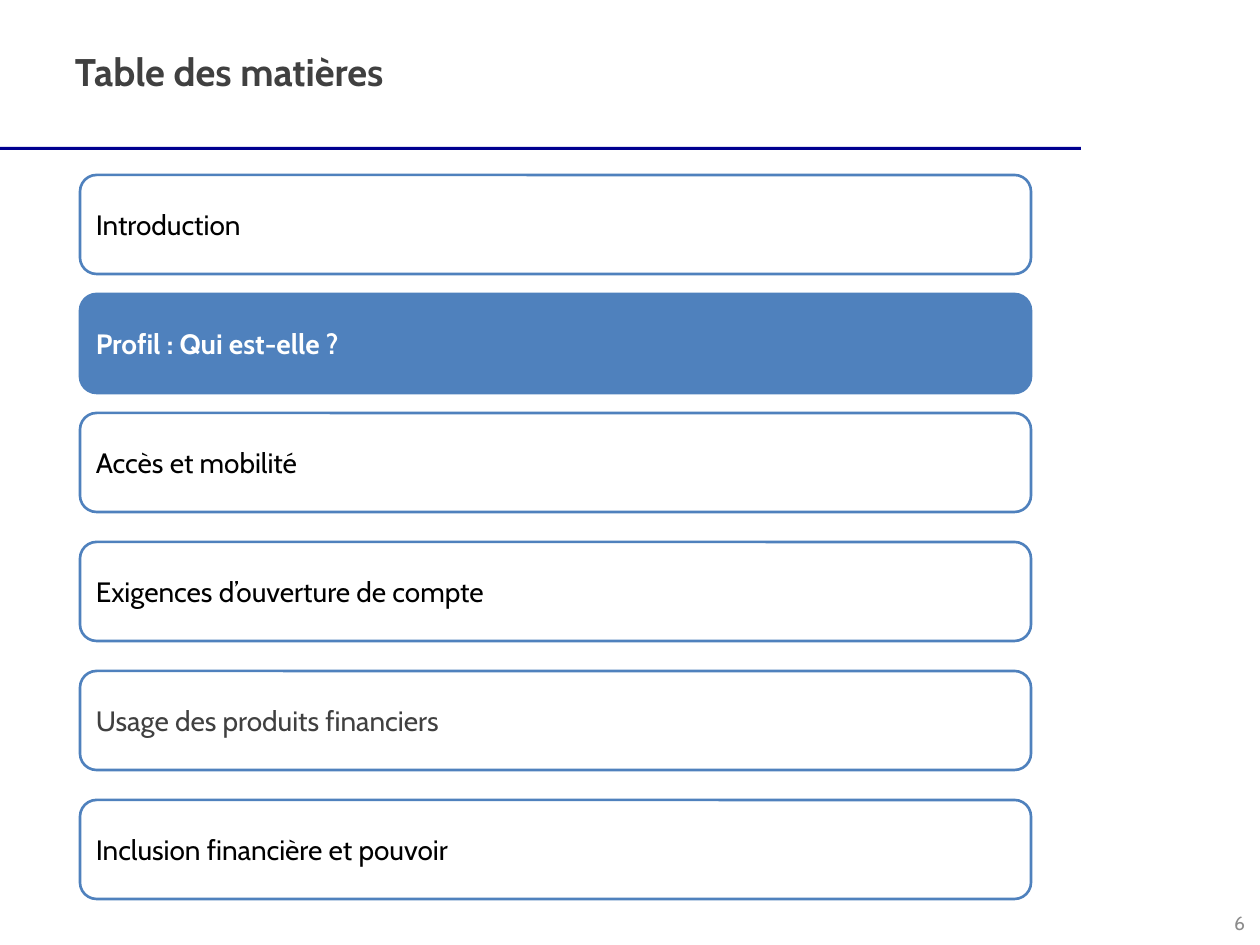
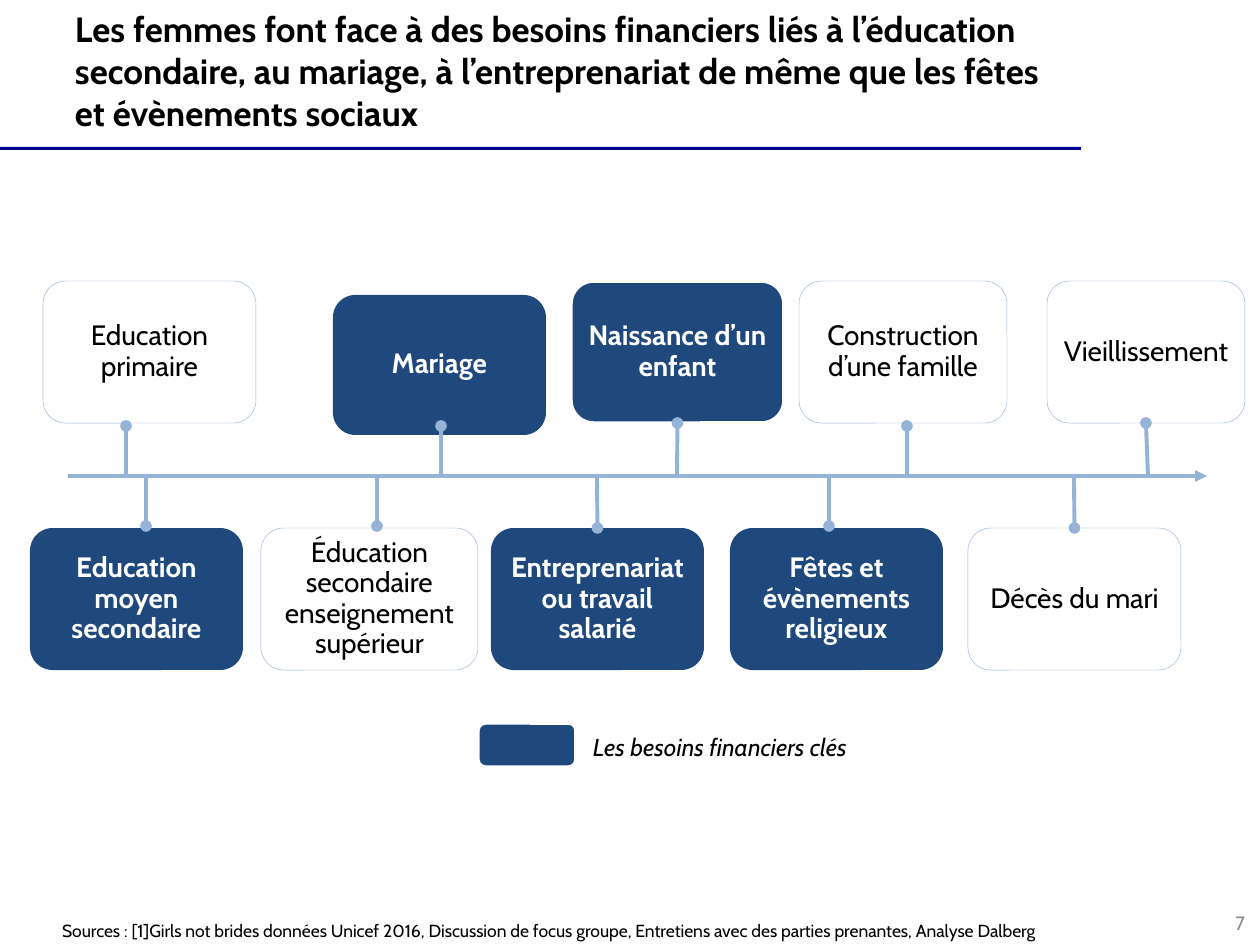
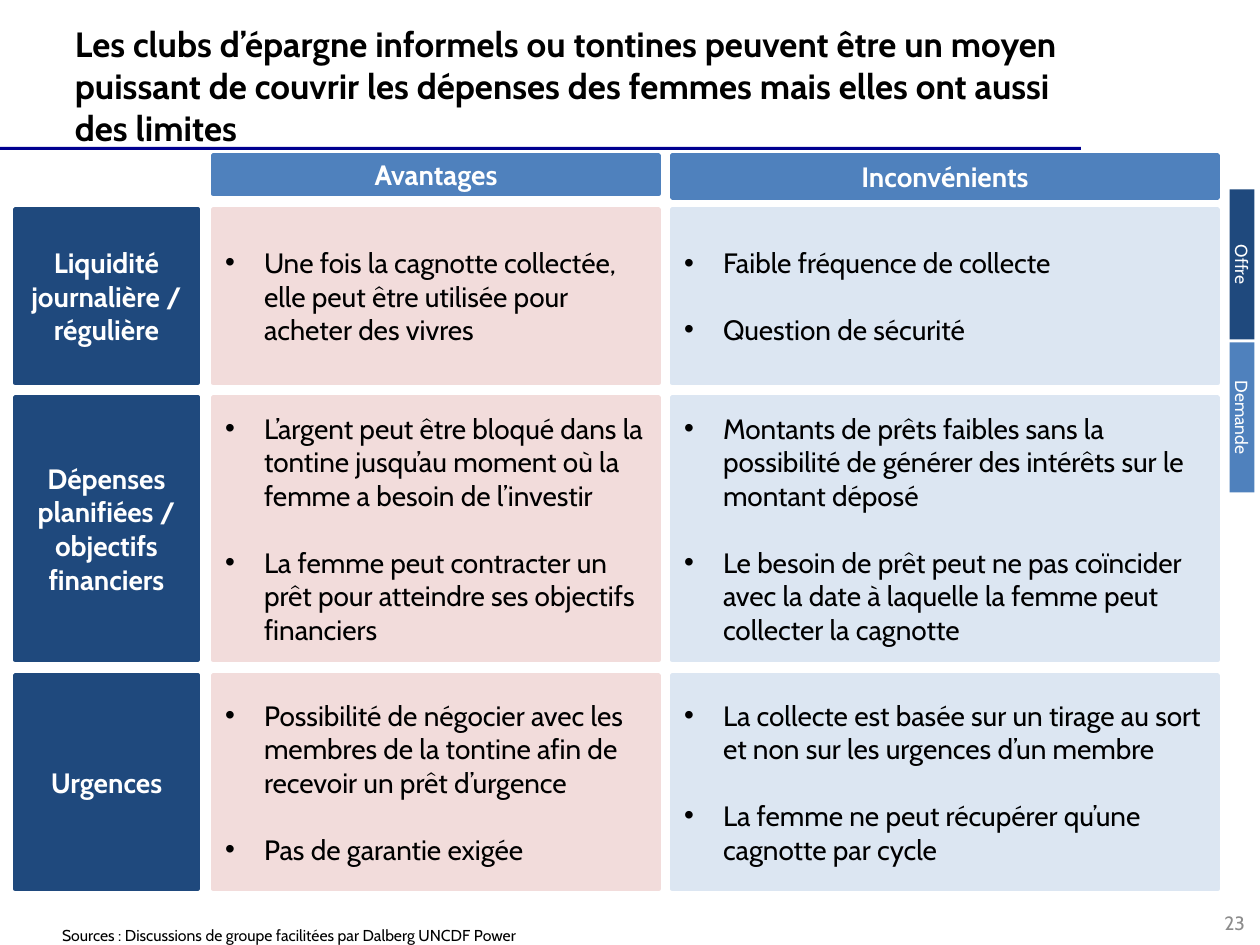
from lxml import etree
from pptx import Presentation
from pptx import util as u
from pptx.dml import color
from pptx.enum import shapes, text
from pptx.oxml import ns

FONT = "Cabin"
BLACK, WHITE, CHARCOAL, GRAY = "000000", "FFFFFF", "404040", "8C8C8C"
NAVY, BLUE, PALE_BLUE, RULE_BLUE = "1F497D", "4F81BD", "95B3D7", "000090"
PINK, ICE = "F2DCDB", "DCE6F2"
LEFT, CENTER, RIGHT = text.PP_ALIGN.LEFT, text.PP_ALIGN.CENTER, text.PP_ALIGN.RIGHT
TOP, MIDDLE, BOTTOM = text.MSO_ANCHOR.TOP, text.MSO_ANCHOR.MIDDLE, text.MSO_ANCHOR.BOTTOM
RECTANGLE = shapes.MSO_SHAPE.RECTANGLE
ROUNDED = shapes.MSO_SHAPE.ROUNDED_RECTANGLE
PAD = (12, 6)

CHAPTERS = [
    ("Introduction", 175, BLACK),
    ("Profil : Qui est-elle ?", 294, WHITE),
    ("Accès et mobilité", 413, BLACK),
    ("Exigences d’ouverture de compte", 542, BLACK),
    ("Usage des produits financiers", 671, CHARCOAL),
    ("Inclusion financière et pouvoir", 800, BLACK),
]
CURRENT_CHAPTER = "Profil : Qui est-elle ?"

EVENT_STYLES = {
    "plain": (None, PALE_BLUE, 0.25, BLACK),
    "key": (NAVY, None, 0, WHITE),
    "framed": (NAVY, WHITE, 2, WHITE),
}
EVENTS = [
    ("Education primaire", "plain", (43, 281, 213, 142), 126),
    ("Mariage", "key", (333, 295, 213, 140), 441),
    ("Naissance d’un enfant", "framed", (571, 281, 213, 142), 677),
    ("Construction d’une famille", "plain", (799, 281, 208, 142), 907),
    ("Vieillissement", "plain", (1047, 281, 198, 142), 1148),
    ("Education moyen secondaire", "key", (30, 528, 213, 142), 146),
    ("Éducation secondaire enseignement supérieur", "plain", (261, 528, 217, 142), 377),
    ("Entreprenariat ou travail salarié", "key", (491, 528, 213, 142), 597),
    ("Fêtes et évènements religieux", "key", (730, 528, 213, 142), 829),
    ("Décès du mari", "plain", (968, 528, 213, 142), 1074),
]
AXIS_Y, STEM = 476, 50

LABEL_COLUMN = (15, 183)
COLUMNS = [
    ("Avantages", 213, 446, 39, PINK),
    ("Inconvénients", 672, 546, 43, ICE),
]
ROWS = [
    ("Liquidité journalière / régulière", 209, 174, [
        ["Une fois la cagnotte collectée, elle peut être utilisée pour acheter des vivres"],
        ["Faible fréquence de collecte", "Question de sécurité"],
    ]),
    ("Dépenses planifiées / objectifs financiers", 397, 263, [
        ["L’argent peut être bloqué dans la tontine jusqu’au moment où la femme a besoin de l’investir",
         "La femme peut contracter un prêt pour atteindre ses objectifs financiers"],
        ["Montants de prêts faibles sans la possibilité de générer des intérêts sur le montant déposé",
         "Le besoin de prêt peut ne pas coïncider avec la date à laquelle la femme peut "
         "collecter la cagnotte"],
    ]),
    ("Urgences", 675, 214, [
        ["Possibilité de négocier avec les membres de la tontine afin de recevoir un prêt d’urgence",
         "Pas de garantie exigée"],
        ["La collecte est basée sur un tirage au sort et non sur les urgences d’un membre",
         "La femme ne peut récupérer qu’une cagnotte par cycle"],
    ]),
]
SIDE_TABS = [("Offre", NAVY), ("Demande", BLUE)]


def px(value):
    return u.Emu(round(value * 914400 / 126))


def rgb(value):
    return color.RGBColor.from_string(value)


def add_bullet(paragraph):
    properties = paragraph._p.get_or_add_pPr()
    properties.set("marL", str(px(39)))
    properties.set("indent", str(-px(39)))
    etree.SubElement(properties, ns.qn("a:buFont")).set("typeface", "Arial")
    etree.SubElement(properties, ns.qn("a:buChar")).set("char", "•")


def write(shape, lines, size, ink=BLACK, bold=False, italic=False, align=LEFT,
          anchor=MIDDLE, pad=PAD, bullets=False, line_spacing=None):
    frame = shape.text_frame
    frame.word_wrap = True
    frame.vertical_anchor = anchor
    frame.margin_left = frame.margin_right = px(pad[0])
    frame.margin_top = frame.margin_bottom = px(pad[1])
    for index, line in enumerate(lines):
        paragraph = frame.add_paragraph() if index else frame.paragraphs[0]
        paragraph.text = line
        paragraph.alignment = align
        if bullets:
            add_bullet(paragraph)
        if index:
            paragraph.space_before = u.Pt(19)
        if line_spacing:
            paragraph.line_spacing = line_spacing
        font = paragraph.font
        font.name, font.size = FONT, u.Pt(size)
        font.bold, font.italic = bold, italic
        font.color.rgb = rgb(ink)


def add_text(slide, box, line, size, **style):
    write(slide.shapes.add_textbox(*map(px, box)), [line], size, **style)


def add_box(slide, kind, box, fill=None, outline=None, weight=0, corner=None):
    shape = slide.shapes.add_shape(kind, *map(px, box))
    shape.shadow.inherit = False
    if corner:
        shape.adjustments[0] = corner
    if fill:
        shape.fill.solid()
        shape.fill.fore_color.rgb = rgb(fill)
    else:
        shape.fill.background()
    if outline:
        shape.line.color.rgb = rgb(outline)
        shape.line.width = u.Pt(weight)
    else:
        shape.line.fill.background()
    return shape


def add_line(slide, start, end, tip):
    connector = slide.shapes.add_connector(shapes.MSO_CONNECTOR.STRAIGHT, *map(px, start + end))
    connector.line.color.rgb = rgb(PALE_BLUE)
    connector.line.width = u.Pt(2.25)
    etree.SubElement(connector.line._get_or_add_ln(), ns.qn("a:tailEnd")).set("type", tip)
    etree.SubElement(connector._element.spPr, ns.qn("a:effectLst"))
    return connector


def add_slide(presentation, title, title_top, number, title_size=20, ink=BLACK):
    slide = presentation.slides.add_slide(presentation.slide_layouts[6])
    add_box(slide, RECTANGLE, (0, 147, 1081, 3), RULE_BLUE)
    add_text(slide, (63, title_top, 1018, 84), title, title_size, ink=ink, bold=True, anchor=TOP)
    add_text(slide, (973, 898, 284, 50), number, 11, ink=GRAY, align=RIGHT)
    return slide


def add_sources(slide, line, top, size):
    add_text(slide, (62, top, 1116, 53), line, size, anchor=BOTTOM, pad=(0, 0))


def build_contents(presentation):
    slide = add_slide(presentation, "Table des matières", 42, "6", 22, CHARCOAL)
    for chapter, top, ink in CHAPTERS:
        current = chapter == CURRENT_CHAPTER
        box = add_box(slide, ROUNDED, (80, top, 951, 99), BLUE if current else None, BLUE, 1.5)
        write(box, [chapter], 16, ink=ink, bold=current, pad=(11, 5))


def add_event(slide, label, style, box, stem_x):
    fill, outline, weight, ink = EVENT_STYLES[style]
    shape = add_box(slide, ROUNDED, box, fill, outline, weight, corner=0.16)
    write(shape, [label], 16, ink=ink, bold=fill is not None, align=CENTER, pad=(5, 5),
          line_spacing=0.9)
    left, top, width, height = box
    above = top < AXIS_Y
    edge, side = (top + height, 2) if above else (top, 0)
    stem_end = AXIS_Y - STEM if above else AXIS_Y + STEM
    stem = add_line(slide, (stem_x, AXIS_Y), (stem_x, stem_end), "oval")
    if abs(left + width / 2 - stem_x) <= 2 and abs(edge - stem_end) <= 4:
        stem.end_connect(shape, side)


def build_timeline(presentation):
    slide = add_slide(
        presentation,
        "Les femmes font face à des besoins financiers liés à l’éducation secondaire, au mariage, "
        "à l’entreprenariat de même que les fêtes et évènements sociaux", 1, "7")
    add_line(slide, (68, AXIS_Y), (1207, AXIS_Y), "triangle")
    for event in EVENTS:
        add_event(slide, *event)
    add_box(slide, ROUNDED, (478, 723, 98, 44), NAVY, WHITE, 2)
    add_text(slide, (581, 726, 318, 72), "Les besoins financiers clés", 14, italic=True, anchor=TOP)
    add_sources(slide, "Sources : [1]Girls not brides données Unicef 2016, Discussion de focus groupe, "
                "Entretiens avec des parties prenantes, Analyse Dalberg", 888, 10)


def add_heading(slide, box, label, fill):
    shape = add_box(slide, RECTANGLE, box, fill, fill, 2)
    write(shape, [label], 16, ink=WHITE, bold=True, align=CENTER)


def build_comparison(presentation):
    slide = add_slide(
        presentation,
        "Les clubs d’épargne informels ou tontines peuvent être un moyen puissant de couvrir "
        "les dépenses des femmes mais elles ont aussi des limites", 16, "23")
    for heading, left, width, height, _ in COLUMNS:
        add_heading(slide, (left, 155, width, height), heading, BLUE)
    for label, top, height, cells in ROWS:
        add_heading(slide, (LABEL_COLUMN[0], top, LABEL_COLUMN[1], height), label, NAVY)
        for (_, left, width, _, tint), points in zip(COLUMNS, cells):
            cell = add_box(slide, RECTANGLE, (left, top, width, height), tint, tint, 2)
            write(cell, points, 16, bullets=True)
    for index, (label, fill) in enumerate(SIDE_TABS):
        tab = add_box(slide, RECTANGLE, (1167, 252 + 153 * index, 150, 25), fill)
        tab.rotation = 90
        write(tab, [label], 10, ink=WHITE, align=CENTER, pad=(0, 0))
    add_sources(slide, "Sources : Discussions de groupe facilitées par Dalberg UNCDF Power", 892, 9)


def main():
    presentation = Presentation()
    presentation.slide_width, presentation.slide_height = px(1260), px(945)
    build_contents(presentation)
    build_timeline(presentation)
    build_comparison(presentation)
    presentation.save("out.pptx")


if __name__ == "__main__":
    main()
